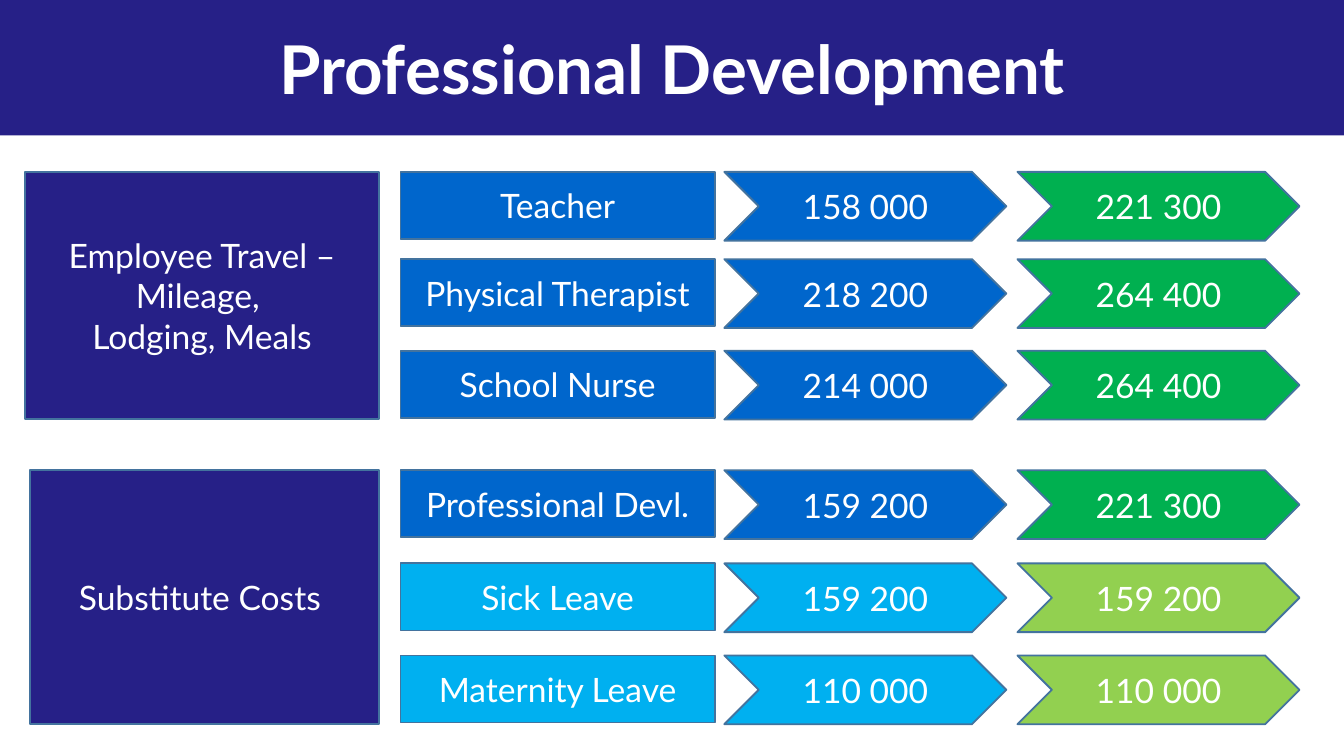
from pptx import Presentation
from pptx.dml.color import RGBColor
from pptx.enum.shapes import MSO_SHAPE as Preset
from pptx.enum.text import MSO_ANCHOR as Anchor, PP_ALIGN as Align
from pptx.util import Cm, Pt

NAVY = RGBColor(0x26, 0x20, 0x87)
BLUE = RGBColor(0x00, 0x66, 0xCC)
SKY = RGBColor(0x00, 0xB0, 0xF0)
GREEN = RGBColor(0x00, 0xB0, 0x50)
LIME = RGBColor(0x92, 0xD0, 0x50)
OUTLINE = RGBColor(0x43, 0x73, 0x9E)
WHITE = RGBColor(0xFF, 0xFF, 0xFF)

SLIDE_WIDTH, SLIDE_HEIGHT = 25.4, 14.29
LABEL_LEFT, LABEL_WIDTH, LABEL_HEIGHT = 7.57, 5.94, 1.27
FIRST_LEFT, SECOND_LEFT = 13.69, 19.23
CHEVRON_WIDTH, CHEVRON_HEIGHT = 5.33, 1.3

# Category boxes: text, left, top, width, height
CATEGORIES = [
    ("Employee Travel – Mileage, \vLodging, Meals", 0.48, 3.25, 6.68, 4.67),
    ("Substitute Costs ", 0.56, 8.89, 6.6, 4.8),
]

# Rows: top, label, first value, second value, first colour, second colour
ROWS = [
    (3.25, "Teacher", "158 000", "221 300", BLUE, GREEN),
    (4.9, "Physical Therapist", "218 200", "264 400", BLUE, GREEN),
    (6.63, "School Nurse", "214 000", "264 400", BLUE, GREEN),
    (8.89, "Professional Devl.", "159 200", "221 300", BLUE, GREEN),
    (10.65, "Sick Leave", "159 200", "159 200", SKY, LIME),
    (12.39, "Maternity Leave", "110 000", "110 000", SKY, LIME),
]


def write_text(shape, text, size=18, bold=False, color=WHITE, font_name="Lato"):
    frame = shape.text_frame
    frame.word_wrap = True
    frame.vertical_anchor = Anchor.MIDDLE
    paragraph = frame.paragraphs[0]
    paragraph.text = text
    paragraph.alignment = Align.CENTER
    for run in paragraph.runs:
        run.font.name = font_name
        run.font.size = Pt(size)
        run.font.bold = bold
        run.font.color.rgb = color


class SlideBuilder:
    def __init__(self, slide, outline=OUTLINE, line_width=1):
        self.slide = slide
        self.outline = outline
        self.line_width = line_width

    def add_preset(self, preset, left, top, width, height, fill, outlined=True):
        shape = self.slide.shapes.add_shape(
            preset, Cm(left), Cm(top), Cm(width), Cm(height))
        shape.shadow.inherit = False
        shape.fill.solid()
        shape.fill.fore_color.rgb = fill
        if outlined:
            shape.line.color.rgb = self.outline
            shape.line.width = Pt(self.line_width)
        else:
            shape.line.fill.background()
        return shape

    def title_bar(self, text):
        shape = self.add_preset(
            Preset.RECTANGLE, 0, 0, SLIDE_WIDTH, 2.56, NAVY, outlined=False)
        write_text(shape, text, size=36, bold=True)

    def box(self, text, left, top, width, height, fill):
        shape = self.add_preset(Preset.RECTANGLE, left, top, width, height, fill)
        write_text(shape, text)

    def chevron(self, text, left, top, fill):
        shape = self.add_preset(
            Preset.CHEVRON, left, top, CHEVRON_WIDTH, CHEVRON_HEIGHT, fill)
        write_text(shape, text)


def main():
    presentation = Presentation()
    presentation.slide_width = Cm(SLIDE_WIDTH)
    presentation.slide_height = Cm(SLIDE_HEIGHT)
    slide = presentation.slides.add_slide(presentation.slide_layouts[6])
    builder = SlideBuilder(slide)

    # Title
    builder.title_bar("Professional Development")

    # Category boxes
    for text, left, top, width, height in CATEGORIES:
        builder.box(text, left, top, width, height, NAVY)

    # Label and two values on each row
    for top, label, first, second, first_color, second_color in ROWS:
        builder.box(label, LABEL_LEFT, top, LABEL_WIDTH, LABEL_HEIGHT, first_color)
        builder.chevron(first, FIRST_LEFT, top, first_color)
        builder.chevron(second, SECOND_LEFT, top, second_color)

    presentation.save("out.pptx")


if __name__ == "__main__":
    main()
